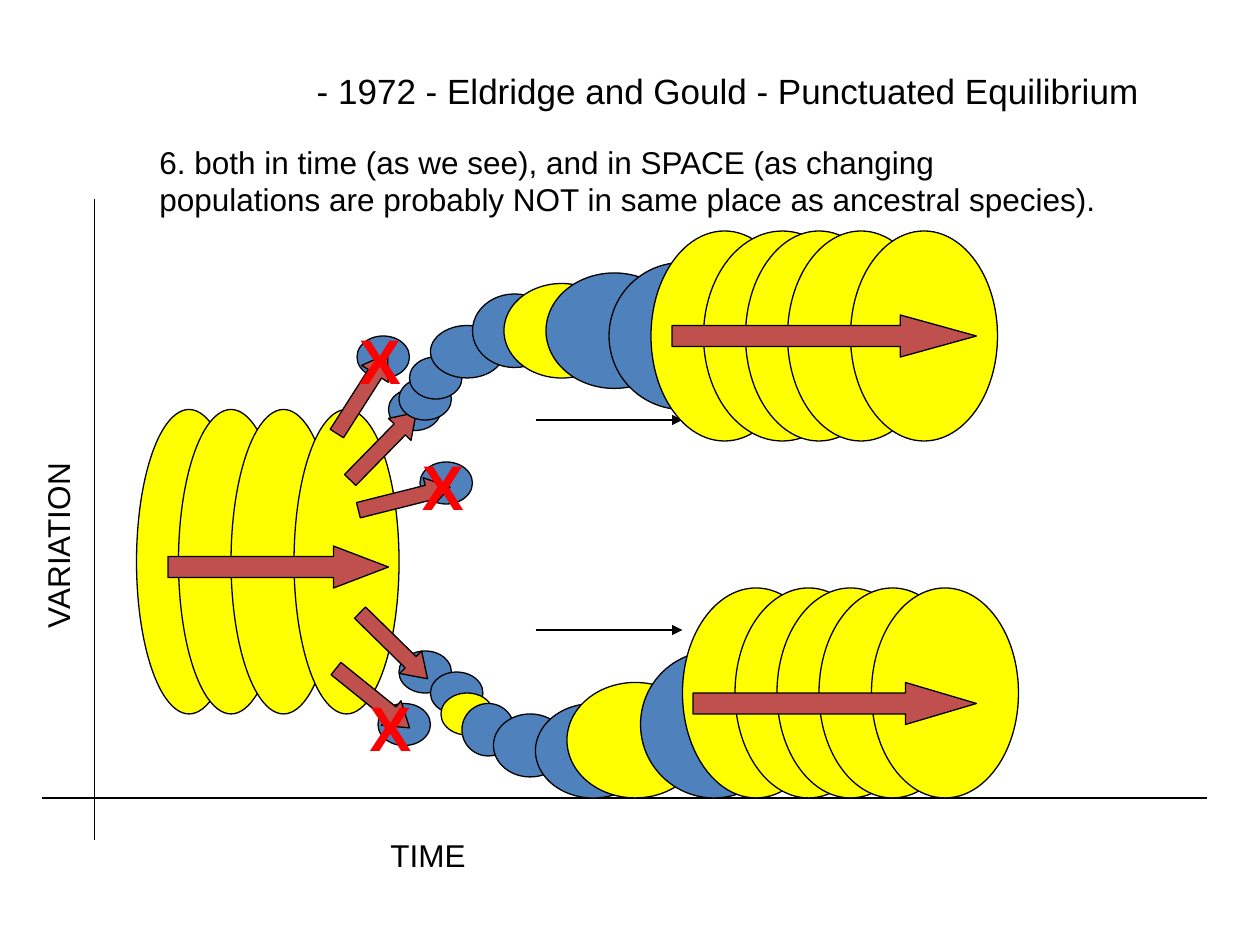
from lxml.etree import SubElement
from pptx import Presentation
from pptx.dml.color import RGBColor
from pptx.enum.shapes import MSO_CONNECTOR, MSO_SHAPE
from pptx.oxml.ns import qn
from pptx.util import Pt

YELLOW, BLUE, RED, BLACK = "FFFF00", "4F81BD", "C0504D", "000000"
CROSS_RED = "FF0000"


def color(target, value):
    """Set a colour format from a hex string."""
    target.rgb = RGBColor.from_string(value)


def add_body(slide, kind, box, fill):
    """Add an outlined preset shape with a solid fill."""
    body = slide.shapes.add_shape(kind, *map(Pt, box))
    body.shadow.inherit = False
    body.fill.solid()
    color(body.fill.fore_color, fill)
    color(body.line.color, BLACK)
    body.line.width = Pt(0.75)
    return body


def add_population(slide, box, fill):
    """Add one population as an ellipse."""
    add_body(slide, MSO_SHAPE.OVAL, box, fill)


def add_trend(slide, box, head, rotation=0):
    """Add a block arrow with the given head length ratio."""
    trend = add_body(slide, MSO_SHAPE.RIGHT_ARROW, box, RED)
    trend.adjustments[1] = head
    trend.rotation = rotation


def add_line(slide, start, end, arrow=False):
    """Add a thin black line, with an arrowhead at its end if asked."""
    line = slide.shapes.add_connector(
        MSO_CONNECTOR.STRAIGHT, *map(Pt, start + end))
    color(line.line.color, BLACK)
    line.line.width = Pt(0.75)
    if arrow:
        SubElement(line.line._get_or_add_ln(), qn("a:tailEnd"), type="triangle")
    SubElement(line._element.spPr, qn("a:effectLst"))


def add_label(slide, box, words, size=18, ink=BLACK, bold=False):
    """Add a wrapped, left-aligned Arial text."""
    label = slide.shapes.add_textbox(*map(Pt, box))
    label.text_frame.word_wrap = True
    run = label.text_frame.paragraphs[0].add_run()
    run.text = words
    run.font.name = "Arial"
    run.font.size = Pt(size)
    run.font.bold = bold
    color(run.font.color, ink)
    return label


def add_heading(slide, box):
    """Place the indented title and the statement below it."""
    left, top, width, height = box
    title = add_label(slide, (left, top, width, 67),
                      "- 1972 - Eldridge and Gould - Punctuated Equilibrium", 20)
    title.text_frame.margin_left = Pt(157)
    add_label(slide, (left + 60, top + 42, 552, height - 42),
              "6. both in time (as we see), and in SPACE (as changing "
              "populations are probably NOT in same place as ancestral species).")


def add_axes(slide, box):
    """Place the two axes and their names."""
    left, top, width, height = box
    add_line(slide, (left + 30, top), (left + 30, top + height))
    add_line(slide, (left, top + height - 24), (left + width, top + height - 24))
    add_label(slide, (left + 192, top + height - 6, 300, 28.8), "TIME")
    variation = add_label(slide, (left - 162, top + 66.7, 342, 28.8), "VARIATION")
    variation.rotation = 270


def add_ancestors(slide, box):
    """Place the ancestral species and its trend."""
    left, top, width, height = box
    for x in (0, 24, 54, 90):
        add_population(slide, (left + x, top, width - 90, height), YELLOW)
    add_trend(slide, (left + 18, top + 78, 126, 24), 1.31)


def add_offshoots(slide, box):
    """Place the isolated populations, the arrows to them and the extinctions."""
    left, top = box[:2]
    for x, y in ((60, 84), (24, 12), (42, 42), (36, 222), (48, 192)):
        add_population(slide, (left + x, top + y, 30, 24), BLUE)
    for x, y, rotation in ((0, 36, 302.5), (12, 66, 314.4), (18, 180, 44.4),
                           (6, 210, 38.9), (24, 96, 345.9)):
        add_trend(slide, (left + x, top + y, 54, 18), 0.75, rotation)
    for x, y in ((18, 0), (54, 72), (24, 210)):
        add_label(slide, (left + x, top + y, 60, 50.4), "X", 36, CROSS_RED, True)


def add_lineage(slide, box, stages, migration, species, trend, head):
    """Place a changing lineage, its migration arrow and the stable species."""
    left, top, _, height = box
    for x, y, w, h, fill in stages:
        add_population(slide, (left + x, top + y, w, h), fill)
    x, y = left + migration[0], top + migration[1]
    add_line(slide, (x, y), (x + 84, y), arrow=True)
    for x, w in species:
        add_population(slide, (left + x, top, w, height), YELLOW)
    x, y, w = trend
    add_trend(slide, (left + x, top + y, w, 24), head)


UPPER_STAGES = (
    (0, 84, 30, 24, BLUE), (6, 72, 30, 24, BLUE), (18, 54, 42, 30, BLUE),
    (42, 36, 48, 42, BLUE), (60, 30, 66, 54, YELLOW), (84, 24, 78, 66, BLUE),
    (120, 18, 84, 84, BLUE))
LOWER_STAGES = (
    (0, 48, 30, 24, BLUE), (6, 60, 30, 24, YELLOW), (18, 66, 30, 30, BLUE),
    (36, 72, 42, 36, BLUE), (60, 66, 66, 54, BLUE), (78, 54, 78, 66, YELLOW),
    (120, 36, 84, 84, BLUE))
UPPER_SPECIES = ((144, 84), (174, 90), (198, 84), (222, 84), (258, 84))
LOWER_SPECIES = ((144, 84), (174, 84), (198, 84), (222, 84), (252, 84))


def main():
    """Build the slide and save it."""
    deck = Presentation()
    deck.slide_width, deck.slide_height = Pt(720), Pt(540)
    slide = deck.slides.add_slide(deck.slide_layouts[6])
    add_heading(slide, (24, 36, 678, 92.4))
    add_axes(slide, (24, 114, 666, 366))
    add_ancestors(slide, (78, 234, 150, 174))
    add_offshoots(slide, (180, 180, 114, 261))
    add_lineage(slide, (228, 132, 342, 120), UPPER_STAGES, (78, 108),
                UPPER_SPECIES, (156, 48, 174), 1.81)
    add_lineage(slide, (246, 336, 336, 120), LOWER_STAGES, (60, 24),
                LOWER_SPECIES, (150, 54, 162), 1.69)
    deck.save("out.pptx")


if __name__ == "__main__":
    main()
